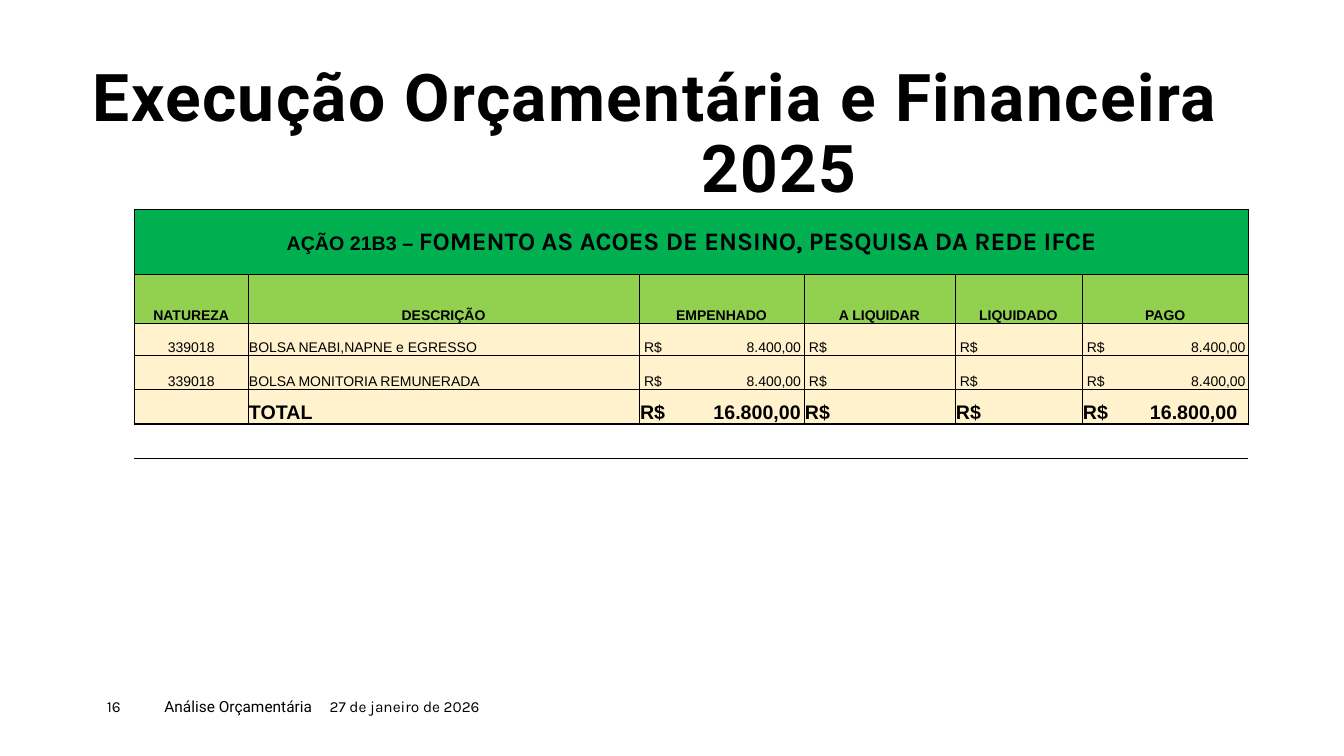
from dataclasses import dataclass
from itertools import accumulate

from lxml.etree import SubElement
from pptx import Presentation
from pptx.dml.color import RGBColor
from pptx.enum.text import MSO_ANCHOR as Anchor, MSO_AUTO_SIZE as AutoSize, PP_ALIGN as Align
from pptx.oxml.ns import qn
from pptx.util import Inches, Pt


@dataclass(frozen=True)
class Theme:
    ink: str = "000000"
    banner: str = "00B050"
    header: str = "92D050"
    body: str = "FFF2CC"
    heading_font: str = "Roboto"
    text_font: str = "Karla"
    table_font: str = "Arial"
    title_size: int = 47
    banner_size: int = 18
    total_size: int = 14
    footer_size: int = 11
    cell_size: int = 10


def add_span(para, text, *, font, size, color, bold=False, spacing=0):
    """Append formatted text to a paragraph."""
    span = para.add_run()
    span.text = text
    span.font.name, span.font.size, span.font.bold = font, Pt(size), bold
    span.font.color.rgb = RGBColor.from_string(color)
    if spacing:
        span.font._element.set("spc", str(spacing * 100))


def add_right_tab(para, position):
    tabs = SubElement(para._p.get_or_add_pPr(), qn("a:tabLst"))
    SubElement(tabs, qn("a:tab"), pos=str(int(position)), algn="r")


class SlideBuilder:
    """Places elements by percentages of the slide's width and height."""

    def __init__(self, deck, theme):
        self.deck, self.theme = deck, theme
        self.slide = deck.slides.add_slide(deck.slide_layouts[5])

    def across(self, share):
        return int(self.deck.slide_width * share / 100)

    def down(self, share):
        return int(self.deck.slide_height * share / 100)

    def area(self, left, top, width, height):
        return self.across(left), self.down(top), self.across(width), self.down(height)

    def frame(self, box, anchor):
        frame = box.text_frame
        frame.word_wrap, frame.auto_size = True, AutoSize.NONE
        frame.vertical_anchor = anchor
        frame.margin_left = frame.margin_right = frame.margin_top = frame.margin_bottom = 0
        return frame.paragraphs[0]

    def title(self, text, area, first_line, next_lines):
        box = self.slide.shapes.title
        box.left, box.top, box.width, box.height = self.area(*area)
        para = self.frame(box, Anchor.BOTTOM)
        para.alignment, para.line_spacing = Align.LEFT, 0.9
        # A hanging indent sets the wrapped year to the right
        layout = para._p.get_or_add_pPr()
        layout.set("marL", str(self.across(next_lines)))
        layout.set("indent", str(self.across(first_line - next_lines)))
        add_span(para, text, font=self.theme.heading_font, size=self.theme.title_size,
                 color=self.theme.ink, bold=True, spacing=1)

    def label(self, text, area, font):
        box = self.slide.shapes.add_textbox(*self.area(*area))
        para = self.frame(box, Anchor.TOP)
        add_span(para, text, font=font, size=self.theme.footer_size, color=self.theme.ink)

    def table(self, left, top, widths, heights):
        area = self.area(left, top, sum(widths), sum(heights))
        table = self.slide.shapes.add_table(len(heights), len(widths), *area).table
        table.first_row = table.horz_banding = False
        for column, width in zip(table.columns, widths):
            column.width = self.across(width)
        for row, height in zip(table.rows, heights):
            row.height = self.down(height)
        return table

    def cell(self, cell, spans, borders, fill=None, align=Align.LEFT,
             anchor=Anchor.BOTTOM, indent=0, tab=None):
        cell.margin_left = Inches(0.01 + indent)
        cell.margin_right = cell.margin_top = Inches(0.01)
        cell.margin_bottom = 0
        cell.vertical_anchor = anchor
        # Borders come before the fill in the cell's properties
        for side, weight in zip("LRTB", borders):
            line = SubElement(cell._tc.get_or_add_tcPr(), qn(f"a:ln{side}"), w=str(Pt(weight)))
            if weight:
                paint = SubElement(line, qn("a:solidFill"))
                SubElement(paint, qn("a:srgbClr"), val=self.theme.ink)
            else:
                SubElement(line, qn("a:noFill"))
        if fill:
            cell.fill.solid()
            cell.fill.fore_color.rgb = RGBColor.from_string(fill)
        else:
            cell.fill.background()
        para = cell.text_frame.paragraphs[0]
        para.alignment = align
        if tab:
            add_right_tab(para, tab - cell.margin_left)
        for text, style in spans:
            add_span(para, text, color=self.theme.ink, **style)


def add_budget_table(page, theme):
    widths = [8.45, 29.1, 12.27, 11.23, 9.45, 12.4]
    heights = [8.6, 6.48, 4.27, 4.53, 4.53, 4.53]
    table = page.table(10, 27.7, widths, heights)
    row_edges = [1, 1, 0.5, 0.5, 1, 1, 1]
    column_edges = [1] + [0.5] * (len(widths) - 1) + [1]

    # Banner across all columns
    banner = table.cell(0, 0)
    banner.merge(table.cell(0, len(widths) - 1))
    page.cell(banner, [
        ("AÇÃO 21B3 – ", dict(font=theme.table_font, size=theme.total_size, bold=True)),
        ("FOMENTO AS ACOES DE ENSINO, PESQUISA DA REDE IFCE",
         dict(font=theme.text_font, size=theme.banner_size, bold=True)),
    ], [1] * 4, theme.banner, Align.CENTER, Anchor.MIDDLE)

    # Header, entries, total and the closing rule
    plain = dict(font=theme.table_font, size=theme.cell_size)
    strong = dict(plain, bold=True)
    total = dict(strong, size=theme.total_size)
    amounts = ["R$\t8.400,00", "R$", "R$", "R$\t8.400,00"]
    rows = [
        (["NATUREZA", "DESCRIÇÃO", "EMPENHADO", "A LIQUIDAR", "LIQUIDADO", "PAGO"],
         strong, theme.header),
        (["339018", "BOLSA NEABI,NAPNE e EGRESSO", *amounts], plain, theme.body),
        (["339018", "BOLSA MONITORIA REMUNERADA", *amounts], plain, theme.body),
        (["", "TOTAL", "R$\t16.800,00", "R$", "R$", "R$\t16.800,00"], total, theme.body),
        ([""] * len(widths), plain, None),
    ]
    for row, (texts, style, fill) in enumerate(rows, start=1):
        for column, text in enumerate(texts):
            sides = column_edges[column:column + 2] if fill else [0, 0]
            centred = row == 1 or column == 0
            inset = 0.11 if style is total and column == len(widths) - 1 else 0.03
            page.cell(
                table.cell(row, column), [(text, style)] if text else [],
                sides + row_edges[row:row + 2], fill,
                Align.CENTER if centred else Align.LEFT,
                indent=0.04 if style is plain and column > 1 else 0,
                tab=table.columns[column].width - Inches(inset) if "\t" in text else None)


def main():
    deck = Presentation()
    deck.slide_width, deck.slide_height = Inches(13.33), Inches(7.5)
    theme = Theme()
    page = SlideBuilder(deck, theme)

    # Title and table
    page.title("Execução Orçamentária e Financeira 2025", (6.6, 10.5, 88.8, 16.8),
               first_line=0.3, next_lines=45.6)
    add_budget_table(page, theme)

    # Footer: three labels side by side
    footer = [("16", 4.28, theme.text_font),
              ("Análise Orçamentária", 12.3, theme.heading_font),
              ("27 de janeiro de 2026", 15.08, theme.text_font)]
    lefts = accumulate((width for _, width, _ in footer), initial=7.95)
    for left, (text, width, font) in zip(lefts, footer):
        page.label(text, (left, 92.27, width, 3.6), font)

    deck.save("out.pptx")


if __name__ == "__main__":
    main()
